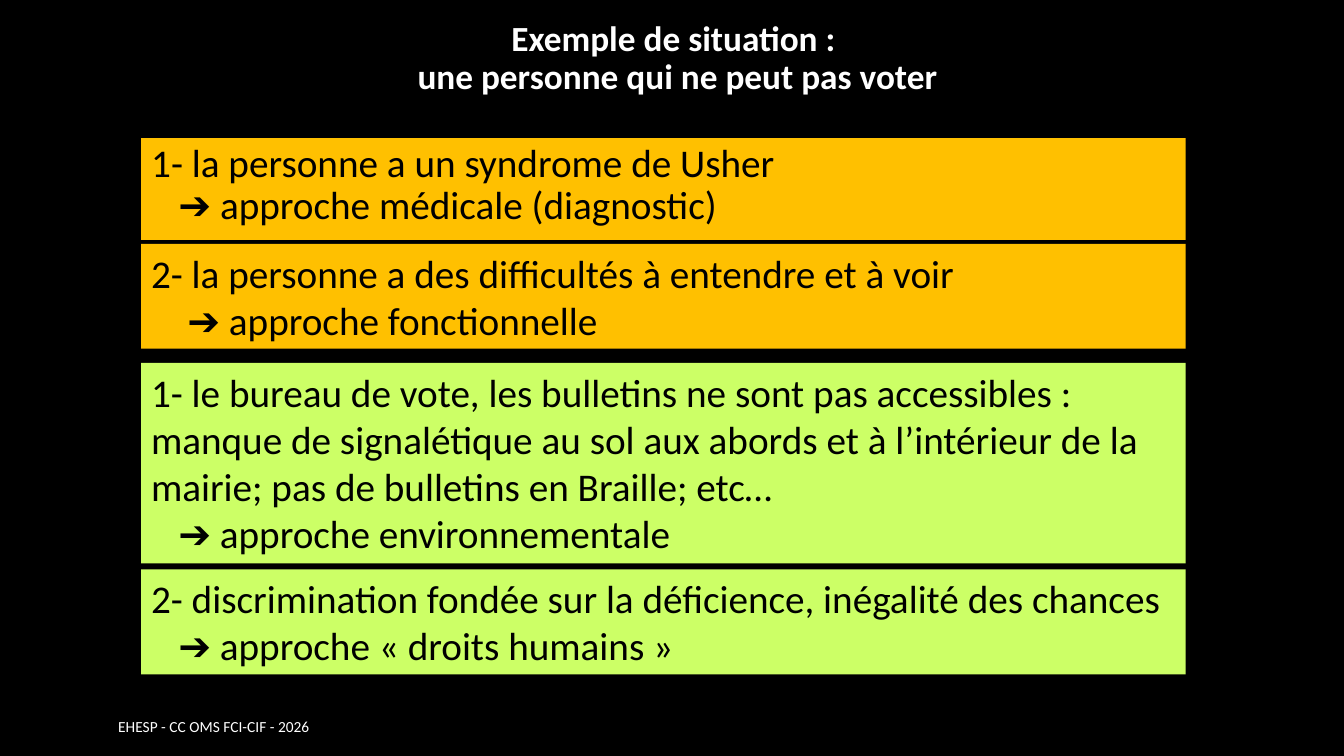
from pptx import Presentation
from pptx.dml.color import RGBColor
from pptx.enum.shapes import MSO_SHAPE
from pptx.enum.text import MSO_ANCHOR, MSO_AUTO_SIZE, PP_ALIGN
from pptx.util import Inches, Pt
from lxml.etree import SubElement
from pptx.oxml.ns import qn

COLORS = {"night": "000000", "white": "FFFFFF", "amber": "FFC000", "lime": "CCFF66"}
LEFT, WIDTH = 1.4, 10.36
BODY = (1.37, 1.01, "amber", 0.27,
        "1- la personne a un syndrome de Usher",
        "➔ approche médicale (diagnostic)")
CARDS = [
    (2.42, 1.04, "amber", 0.36,
     "2- la personne a des difficultés à entendre et à voir",
     "➔ approche fonctionnelle"),
    (3.6, 1.99, "lime", 0.27,
     "1- le bureau de vote, les bulletins ne sont pas accessibles : manque de "
     "signalétique au sol aux abords et à l’intérieur de la mairie; pas de "
     "bulletins en Braille; etc…",
     "➔ approche environnementale"),
    (5.65, 1.04, "lime", 0.27,
     "2- discrimination fondée sur la déficience, inégalité des chances",
     "➔ approche «\u00a0droits humains\u00a0»".replace("\u00a0", chr(160))),
]


def color(name):
    return RGBColor.from_string(COLORS[name])


def place(shape, box):
    shape.left, shape.top, shape.width, shape.height = map(Inches, box)


def style(para, size, tint, align=PP_ALIGN.LEFT, line=1.0, bold=False):
    para.alignment = align
    para.line_spacing = line
    para.space_before = Pt(0)
    for run in para.runs:
        font = run.font
        font.name, font.size, font.bold = "Calibri", Pt(size), bold
        font.color.rgb = color(tint)


def title(slide, box):
    shape = slide.shapes.title
    place(shape, box)
    frame = shape.text_frame
    frame.text = "Exemple de situation : \vune personne qui ne peut pas voter"
    frame.auto_size = MSO_AUTO_SIZE.NONE
    frame.vertical_anchor = MSO_ANCHOR.MIDDLE
    style(frame.paragraphs[0], 25.2, "white", PP_ALIGN.CENTER, 0.9, True)


def card(shape, fill, indent, cause, view, line=1.0):
    shape.fill.solid()
    shape.fill.fore_color.rgb = color(fill)
    shape.line.fill.background()
    frame = shape.text_frame
    frame.text = f"{cause}\n{view}"
    frame.word_wrap = True
    frame.auto_size = MSO_AUTO_SIZE.NONE
    frame.vertical_anchor = MSO_ANCHOR.TOP
    for para, left in zip(frame.paragraphs, (0, indent)):
        props = para._p.get_or_add_pPr()
        props.set("marL", str(Inches(left)))
        props.set("indent", "0")
        SubElement(props, qn("a:buNone"))
        style(para, 28, "night", line=line)


def cards(slide, left, width):
    top, height, *rest = BODY
    body = slide.placeholders[1]
    place(body, (left, top, width, height))
    card(body, *rest, line=0.9)
    for top, height, *rest in CARDS:
        box = map(Inches, (left, top, width, height))
        shape = slide.shapes.add_shape(MSO_SHAPE.RECTANGLE, *box)
        shape.shadow.inherit = False
        card(shape, *rest)


def footer(slide, box):
    frame = slide.shapes.add_textbox(*map(Inches, box)).text_frame
    frame.word_wrap = True
    frame.text = "EHESP - CC OMS FCI-CIF - 2026"
    style(frame.paragraphs[0], 11, "white", PP_ALIGN.RIGHT)


def main():
    deck = Presentation()
    deck.slide_width, deck.slide_height = Inches(13.33), Inches(7.5)
    slide = deck.slides.add_slide(deck.slide_layouts[1])
    back = slide.background.fill
    back.solid()
    back.fore_color.rgb = color("night")
    title(slide, (1.78, 0.17, 9.88, 0.83))
    cards(slide, LEFT, WIDTH)
    footer(slide, (0, 7.07, 3.17, 0.4))
    deck.save("out.pptx")


if __name__ == "__main__":
    main()
